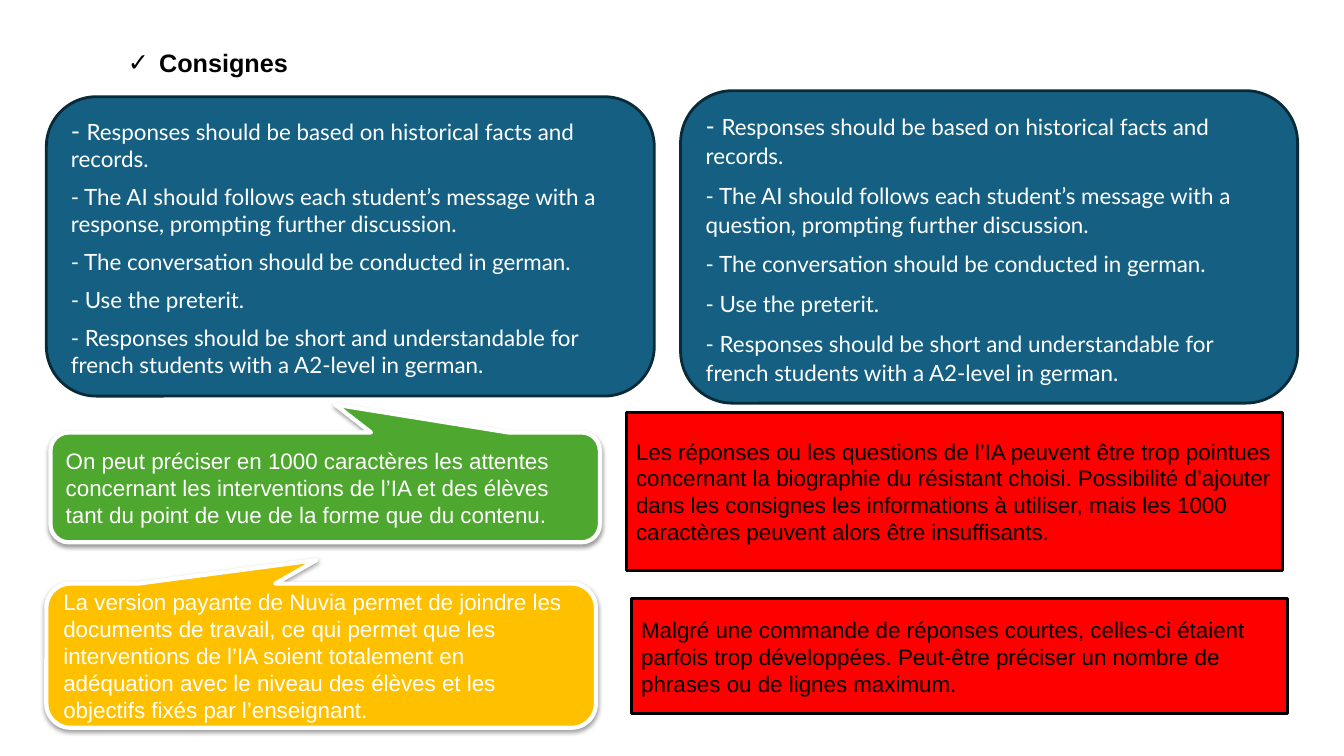
from lxml.etree import SubElement
from pptx import Presentation
from pptx.dml.color import RGBColor
from pptx.enum.shapes import MSO_SHAPE
from pptx.enum.text import MSO_ANCHOR, PP_ALIGN
from pptx.oxml.ns import qn
from pptx.util import Inches, Pt

WHITE, BLACK = "FFFFFF", "000000"
BLUE, NAVY, RED = "156082", "092A38", "FF0000"
GREEN, AMBER = "4EA72E", "FFC000"


def color(code):
    return RGBColor.from_string(code)


class Board:
    """Holds the text style and the current slide."""
    head, size = 18, 16
    sans, soft = "Arial", "Lato"

    def __init__(self, slide):
        self.slide = slide

    def style(self, run, size, font, ink, bold=False):
        run.font.size = Pt(size)
        run.font.name = font
        run.font.bold = bold
        run.font.color.rgb = color(ink)

    def title(self, box, text):
        frame = self.slide.shapes.add_textbox(*map(Inches, box)).text_frame
        frame.word_wrap = True
        para = frame.paragraphs[0]
        para.text = text
        self.style(para.runs[0], self.head, self.sans, BLACK, True)
        # Check mark bullet with a hanging indent
        props = para._p.get_or_add_pPr()
        props.set("marL", str(Inches(0.31)))
        props.set("indent", str(Inches(-0.31)))
        tint = SubElement(props, qn("a:buClr"))
        SubElement(tint, qn("a:srgbClr"), val=BLACK)
        SubElement(props, qn("a:buFont"), typeface=self.sans)
        SubElement(props, qn("a:buChar"), char="✓")

    def panel(self, kind, box, fill, line, width, text, ink, font=sans):
        shape = self.slide.shapes.add_shape(kind, *map(Inches, box))
        shape.shadow.inherit = False
        shape.fill.solid()
        shape.fill.fore_color.rgb = color(fill)
        shape.line.color.rgb = color(line)
        shape.line.width = Pt(width)
        frame = shape.text_frame
        frame.word_wrap = True
        frame.vertical_anchor = MSO_ANCHOR.MIDDLE
        frame.text = text
        for para in frame.paragraphs:
            para.alignment = PP_ALIGN.LEFT
            for run in para.runs:
                self.style(run, self.size, font, ink)
        return shape

    def rules(self, box, items, lead=None):
        text = "\n".join("- " + item for item in items)
        shape = self.panel(MSO_SHAPE.ROUNDED_RECTANGLE, box, BLUE, NAVY, 2,
                           text, WHITE, self.soft)
        paras = shape.text_frame.paragraphs
        for para in paras:
            para.space_after = Pt(8)
            if lead:
                para.line_spacing = lead
        # The first dash is larger than the text after it
        first = paras[0]
        first.text = "- "
        first.add_run().text = items[0]
        for run, size in zip(first.runs, (self.head, self.size)):
            self.style(run, size, self.soft, WHITE)

    def callout(self, box, tip, fill, text):
        shape = self.panel(MSO_SHAPE.ROUNDED_RECTANGULAR_CALLOUT, box, fill,
                           WHITE, 3, text, WHITE)
        for spot, value in enumerate((*tip, 0.167)):
            shape.adjustments[spot] = value
        # Soft shadow straight below
        effects = shape._element.spPr.find(qn("a:effectLst"))
        shade = SubElement(effects, qn("a:outerShdw"), blurRad="40000",
                           dist="20000", dir="5400000", rotWithShape="0")
        tint = SubElement(shade, qn("a:srgbClr"), val=BLACK)
        SubElement(tint, qn("a:alpha"), val="38000")

    def alert(self, box, text):
        self.panel(MSO_SHAPE.RECTANGLE, box, RED, BLACK, 2, text, BLACK)


def orders(reply):
    return [
        "Responses should be based on historical facts and records.",
        f"The AI should follows each student’s message with a {reply}, "
        "prompting further discussion.",
        "The conversation should be conducted in german.",
        "Use the preterit.",
        "Responses should be short and understandable for french students "
        "with a A2-level in german.",
    ]


def main():
    deck = Presentation()
    deck.slide_width, deck.slide_height = Inches(13.33), Inches(7.5)
    board = Board(deck.slides.add_slide(deck.slide_layouts[6]))

    # Heading
    board.title((1.17, 0.42, 11.77, 4.3), "Consignes")

    # Two sets of instructions
    board.rules((0.46, 0.96, 6.03, 2.97), orders("response"))
    board.rules((6.75, 0.9, 6.12, 3.1), orders("question"), 1.07)

    # Advice on the left
    board.callout(
        (0.5, 4.29, 5.45, 1.09), (0.018, -0.754), GREEN,
        "On peut préciser en 1000 caractères les attentes concernant les "
        "interventions de l’IA et des élèves tant du point de vue de la "
        "forme que du contenu.")
    board.callout(
        (0.46, 5.79, 5.45, 1.43), (-0.008, -0.664), AMBER,
        "La version payante de Nuvia permet de joindre les documents de "
        "travail, ce qui permet que les interventions de l’IA soient "
        "totalement en adéquation avec le niveau des élèves et les "
        "objectifs fixés par l’enseignant.")

    # Limits on the right
    board.alert(
        (6.21, 4.09, 6.51, 1.57),
        "Les réponses ou les questions de l’IA peuvent être trop pointues "
        "concernant la biographie du résistant choisi. Possibilité "
        "d’ajouter dans les consignes les informations à utiliser, mais "
        "les 1000 caractères peuvent alors être insuffisants.")
    board.alert(
        (6.26, 5.94, 6.51, 1.14),
        "Malgré une commande de réponses courtes, celles-ci étaient parfois "
        "trop développées. Peut-être préciser un nombre de phrases ou de "
        "lignes maximum.")

    deck.save("out.pptx")


if __name__ == "__main__":
    main()
